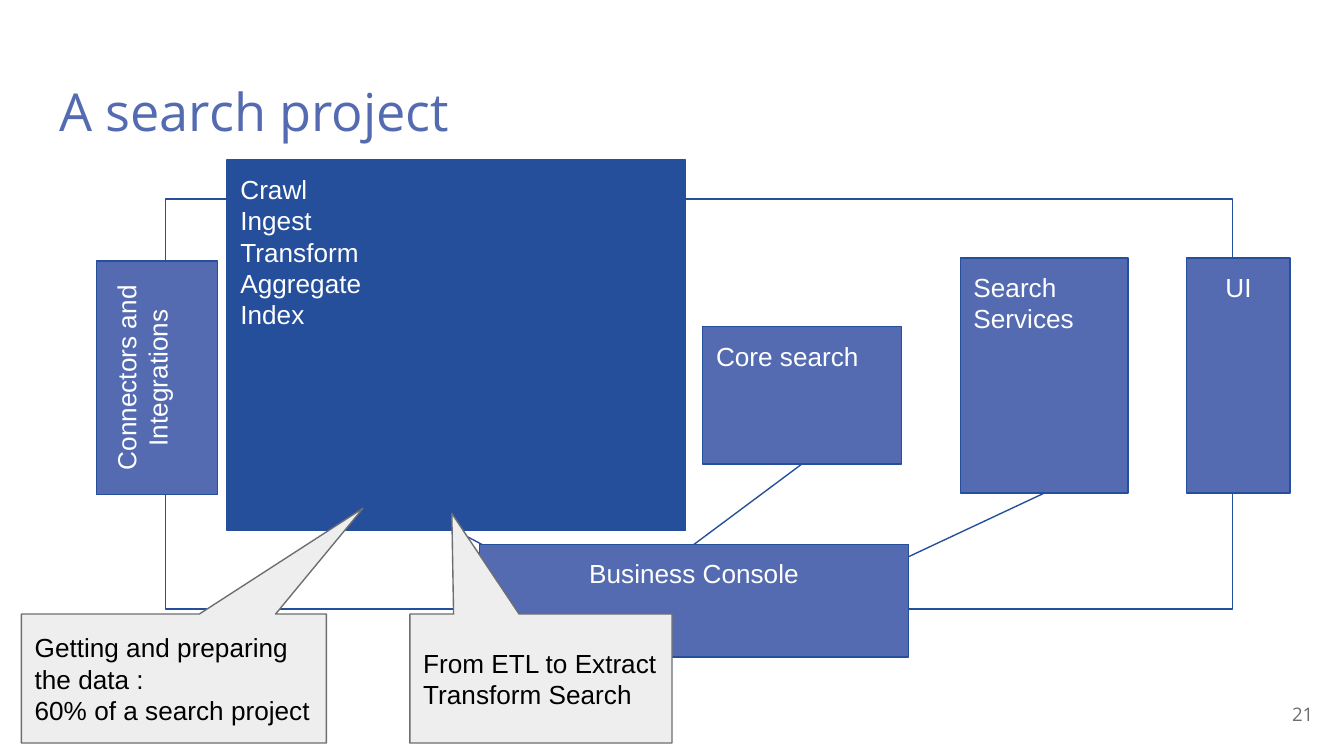
from dataclasses import dataclass

from lxml import etree
from pptx import Presentation
from pptx.dml import color
from pptx.enum import shapes, text
from pptx.oxml import ns
from pptx.util import Pt


@dataclass(frozen=True)
class Theme:
    violet: str = "546BB1"
    navy: str = "254F9B"
    white: str = "FFFFFF"
    black: str = "000000"
    pale: str = "EEEEEE"
    grey: str = "6D6E71"
    heading_font: str = "Open Sans"
    body_font: str = "Arial"
    title_size: float = 28
    body_size: float = 14
    number_size: float = 10
    line_width: float = 0.75
    inset: float = 7.2


LEFT, CENTER, RIGHT = text.PP_ALIGN.LEFT, text.PP_ALIGN.CENTER, text.PP_ALIGN.RIGHT
TOP, MIDDLE = text.MSO_ANCHOR.TOP, text.MSO_ANCHOR.MIDDLE
RECTANGLE = shapes.MSO_SHAPE.RECTANGLE
CALLOUT = shapes.MSO_SHAPE.ROUNDED_RECTANGULAR_CALLOUT


def rgb(value):
    return color.RGBColor.from_string(value)


def top_center(area):
    left, top, width, height = area
    return left + width / 2, top


def bottom_center(area):
    left, top, width, height = area
    return left + width / 2, top + height


class SlideBuilder:
    def __init__(self, deck, theme):
        self.theme = theme
        self.page = deck.slides.add_slide(deck.slide_layouts[5])

    def fill_text(self, shape, lines, font, size, ink, align=LEFT, anchor=TOP):
        frame = shape.text_frame
        frame.word_wrap = True
        frame.auto_size = text.MSO_AUTO_SIZE.NONE
        frame.vertical_anchor = anchor
        frame.margin_left = frame.margin_right = Pt(self.theme.inset)
        frame.margin_top = frame.margin_bottom = Pt(self.theme.inset)
        for index, line in enumerate(lines):
            para = frame.add_paragraph() if index else frame.paragraphs[0]
            para.text = line
            para.alignment = align
            para.font.name = font
            para.font.size = Pt(size)
            para.font.color.rgb = rgb(ink)

    def title(self, area, words):
        title = self.page.shapes.title
        title.left, title.top, title.width, title.height = map(Pt, area)
        self.fill_text(title, [words], self.theme.heading_font,
                       self.theme.title_size, self.theme.violet)

    def number(self, area, words):
        box = self.page.shapes.add_textbox(*map(Pt, area))
        self.fill_text(box, [words], self.theme.heading_font,
                       self.theme.number_size, self.theme.grey, RIGHT, MIDDLE)

    def shape(self, kind, area, fill, edge):
        shape = self.page.shapes.add_shape(kind, *map(Pt, area))
        shape.shadow.inherit = False
        shape.fill.solid()
        shape.fill.fore_color.rgb = rgb(fill)
        shape.line.color.rgb = rgb(edge)
        shape.line.width = Pt(self.theme.line_width)
        return shape

    def block(self, area, lines=(), fill=None, align=LEFT, rotation=0):
        box = self.shape(RECTANGLE, area, fill or self.theme.violet, self.theme.navy)
        box.rotation = rotation
        self.fill_text(box, lines, self.theme.body_font, self.theme.body_size,
                       self.theme.white, align)

    def callout(self, area, tip, lines):
        box = self.shape(CALLOUT, area, self.theme.pale, self.theme.grey)
        for index, value in enumerate((*tip, 0)):
            box.adjustments[index] = value
        self.fill_text(box, lines, self.theme.body_font, self.theme.body_size,
                       self.theme.black, anchor=MIDDLE)

    def link(self, start, end):
        line = self.page.shapes.add_connector(
            shapes.MSO_CONNECTOR.STRAIGHT, *map(Pt, (*start, *end)))
        line.line.color.rgb = rgb(self.theme.navy)
        line.line.width = Pt(self.theme.line_width)
        etree.SubElement(line._element.spPr, ns.qn("a:effectLst"))


def main():
    deck = Presentation()
    deck.slide_width, deck.slide_height = Pt(720), Pt(405)
    theme = Theme()
    slide = SlideBuilder(deck, theme)

    # Title and page number
    slide.title((24.5, 35.3, 671, 45.4), "A search project")
    slide.number((667.5, 367.2, 43.2, 31), "21")

    # Positions of the linked blocks
    core = (376.5, 175, 106.5, 73.5)
    services = (514.4, 138.2, 90, 126)
    console = (257, 291.6, 229.7, 60.5)
    indexing = (121.7, 85.7, 245.5, 198.7)

    # Outer loop and search blocks
    slide.block((88.6, 106.6, 571.7, 219.6), fill=theme.white)
    slide.block(core, ["Core search"])
    slide.block(services, ["Search\vServices"])

    # Links, running behind the console and indexing blocks
    slide.link(bottom_center(indexing), bottom_center(console))
    slide.link(bottom_center(console), bottom_center(services))
    slide.link(bottom_center(core), top_center(console))

    # Front blocks
    slide.block((635.8, 138.2, 55.4, 126), ["UI"], align=CENTER)
    slide.block((21.6, 170, 125.3, 64.8), ["Connectors and Integrations"],
                align=CENTER, rotation=270)
    slide.block(console, ["Business Console"], align=CENTER)
    slide.block(indexing, ["Crawl\vIngest", "Transform", "Aggregate", "Index"],
                fill=theme.navy)

    # Callouts
    slide.callout((11.5, 329, 163.4, 69.1), (0.62, -1.32),
                  ["Getting and preparing the data :", "60% of a search project"])
    slide.callout((219.6, 329, 140.4, 69.1), (-0.34, -1.28),
                  ["From ETL to Extract Transform Search"])

    deck.save("out.pptx")


if __name__ == "__main__":
    main()
